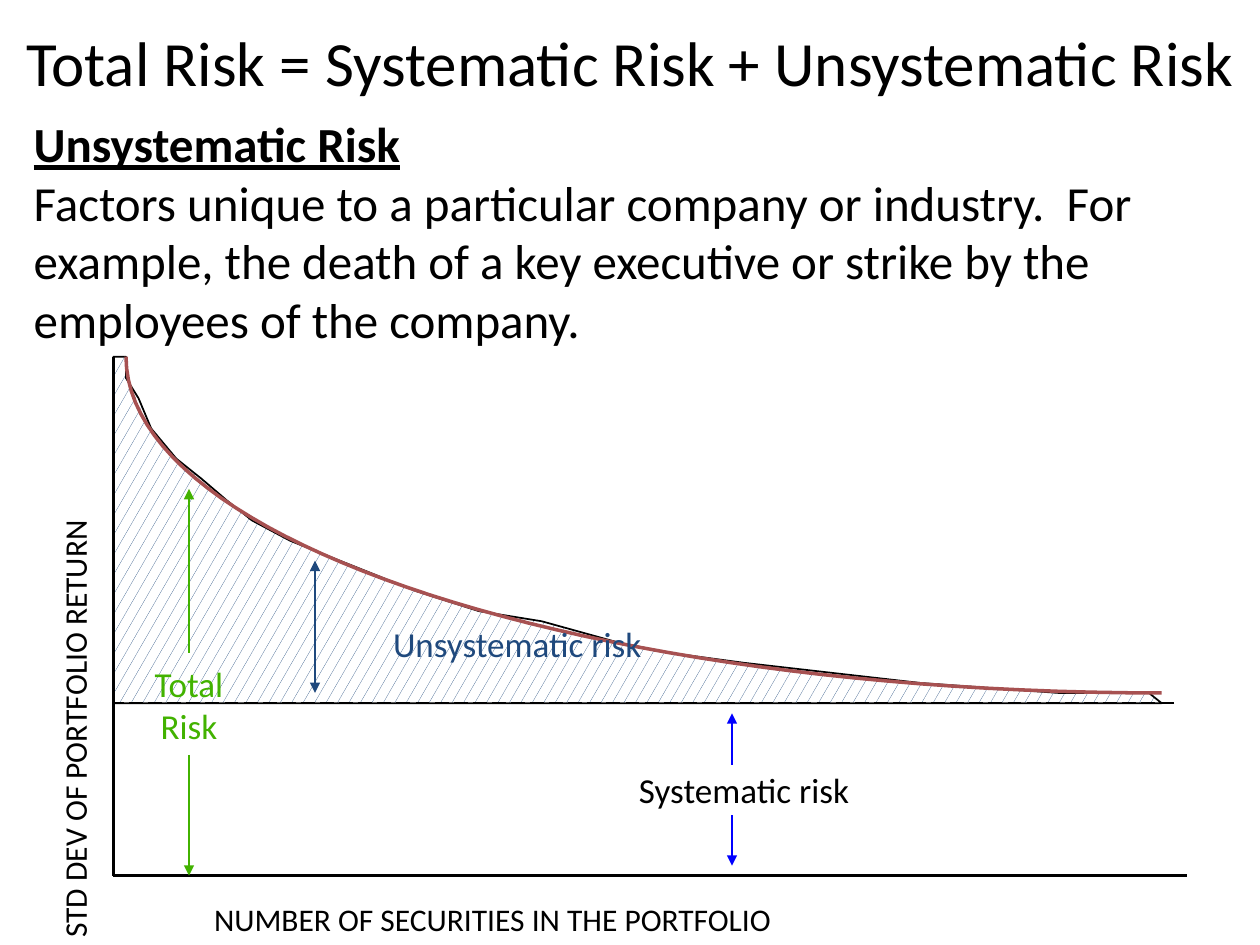
import pptx
import pptx.dml.color
import pptx.enum.dml
import pptx.enum.shapes
import pptx.enum.text
import pptx.oxml
import pptx.oxml.ns
import pptx.util

Pt = pptx.util.Pt
CENTER = pptx.enum.text.PP_ALIGN.CENTER
LEFT = pptx.enum.text.PP_ALIGN.LEFT
BLACK, WHITE, GREEN, NAVY, BLUE, RED = "000000", "FFFFFF", "42B200", "1F497D", "0000FF", "A75151"
RISK_OUTLINE = [
    (7.2, 0), (0, 0), (0, 198), (599, 198), (591.8, 192.2), (540.7, 192.2),
    (461.5, 186.5), (360.7, 175), (317.5, 169.2), (288.7, 163.4), (244.8, 151.2),
    (208.8, 145.4), (172.8, 133.9), (144, 122.4), (115.2, 110.9), (100.8, 105.1),
    (79.2, 93.6), (64.8, 82.1), (50.4, 69.8), (36, 58.3), (21.6, 41),
    (14.4, 23.8), (7.2, 12.2), (7.2, 0),
]
RISK_CURVE = [(7.2, 0), (7.2, 106.6), (272.2, 192.2), (599, 192.2)]


def rgb(value):
    """Turn a hex string into a colour."""
    return pptx.dml.color.RGBColor.from_string(value)


def bezier(controls, steps=48):
    """Sample a cubic curve at equal parameter steps."""
    points = []
    for step in range(steps + 1):
        t = step / steps
        weights = ((1 - t) ** 3, 3 * t * (1 - t) ** 2, 3 * t ** 2 * (1 - t), t ** 3)
        points.append(tuple(sum(w * c[axis] for w, c in zip(weights, controls)) for axis in (0, 1)))
    return points


def add_outline(slide, origin, points, color, width, close):
    """Draw a path through points measured from the origin."""
    placed = [(Pt(origin[0] + x), Pt(origin[1] + y)) for x, y in points]
    builder = slide.shapes.build_freeform(*placed[0], scale=1.0)
    builder.add_line_segments(placed[1:], close=close)
    outline = builder.convert_to_shape()
    outline.shadow.inherit = False
    outline.fill.background()
    outline.line.color.rgb = rgb(color)
    outline.line.width = Pt(width)
    return outline


def add_line(slide, origin, start, end, color, width=1, heads=(), dash=None):
    """Draw a straight line, with arrowheads at the named ends."""
    x, y = origin
    line = slide.shapes.add_connector(
        pptx.enum.shapes.MSO_CONNECTOR.STRAIGHT,
        Pt(x + start[0]), Pt(y + start[1]), Pt(x + end[0]), Pt(y + end[1]))
    line.line.color.rgb = rgb(color)
    line.line.width = Pt(width)
    if dash:
        line.line.dash_style = dash
    namespace = pptx.oxml.ns.nsdecls("a")
    properties = line._element.spPr
    for head in heads:
        properties.find(pptx.oxml.ns.qn("a:ln")).append(
            pptx.oxml.parse_xml(f'<a:{head} {namespace} type="triangle"/>'))
    properties.append(pptx.oxml.parse_xml(f"<a:effectLst {namespace}/>"))


def add_text(slide, origin, box, lines, size, color, align=LEFT, wrap=False, rotation=0):
    """Place a text box with one paragraph for each line."""
    left, top, width, height = box
    label = slide.shapes.add_textbox(Pt(origin[0] + left), Pt(origin[1] + top), Pt(width), Pt(height))
    label.rotation = rotation
    frame = label.text_frame
    frame.word_wrap = wrap
    frame.text = "\n".join(lines)
    for paragraph in frame.paragraphs:
        paragraph.alignment = align
        paragraph.font.name = "Calibri"
        paragraph.font.size = Pt(size)
        paragraph.font.color.rgb = rgb(color)
    return frame


def add_title(slide, box, wording):
    """Fill and place the title placeholder."""
    title = slide.shapes.title
    title.left, title.top, title.width, title.height = map(Pt, box)
    title.text_frame.text = wording
    title.text_frame.vertical_anchor = pptx.enum.text.MSO_ANCHOR.MIDDLE
    heading = title.text_frame.paragraphs[0]
    heading.alignment = CENTER
    heading.font.name = "Calibri"
    heading.font.size = Pt(36)
    heading.font.color.rgb = rgb(BLACK)


def add_definition(slide, box):
    """Write the underlined term and its explanation."""
    definition = add_text(slide, (0, 0), box, [
        "Unsystematic Risk",
        "Factors unique to a particular company or industry.  For example, the death of "
        "a key executive or strike by the employees of the company.",
    ], 28, BLACK, wrap=True)
    term = definition.paragraphs[0]
    term.font.bold = True
    term.font.underline = True


def add_risk_diagram(slide, origin):
    """Draw the diversification diagram from its top left corner."""
    risk_area = add_outline(slide, origin, RISK_OUTLINE, BLACK, 1, True)
    risk_area.fill.patterned()
    risk_area.fill.pattern = pptx.enum.dml.MSO_PATTERN.SMALL_CONFETTI
    risk_area.fill.fore_color.rgb = rgb(NAVY)
    risk_area.fill.back_color.rgb = rgb(WHITE)

    corner = (0, 296.6)
    add_line(slide, origin, corner, (613.4, 296.6), BLACK, 2)
    add_line(slide, origin, corner, (0, 0), BLACK, 2)
    add_outline(slide, origin, bezier(RISK_CURVE), RED, 2, False)
    add_line(slide, origin, (606.2, 198), (0, 198), BLACK,
             dash=pptx.enum.dml.MSO_LINE.LONG_DASH)

    for x, start, end, color, heads in [
        (43.2, 169.2, 75.6, GREEN, ["tailEnd"]),
        (43.2, 227.5, 296.6, GREEN, ["tailEnd"]),
        (115.2, 192.2, 116.6, NAVY, ["headEnd", "tailEnd"]),
        (353.5, 233.3, 203.8, BLUE, ["tailEnd"]),
        (353.5, 262.1, 290.9, BLUE, ["tailEnd"]),
    ]:
        add_line(slide, origin, (x, start), (x, end), color, heads=heads)

    for box, lines, color in [
        ((5.8, 171.4, 74.9, 53.3), ["Total", "Risk"], GREEN),
        ((119.5, 148.3, 222.5, 30.2), ["Unsystematic risk"], NAVY),
        ((270, 231.8, 180.7, 30.2), ["Systematic risk"], BLACK),
    ]:
        add_text(slide, origin, box, lines, 20, color, CENTER)

    add_text(slide, origin, (-171, 170.2, 303.1, 34.6), ["STD DEV OF PORTFOLIO RETURN"],
             18, BLACK, wrap=True, rotation=270)
    add_text(slide, origin, (50.4, 306.7, 493.2, 28), ["NUMBER OF SECURITIES IN THE PORTFOLIO"],
             18, BLACK)


def main():
    """Build the slide and save it."""
    deck = pptx.Presentation()
    deck.slide_width, deck.slide_height = Pt(720), Pt(540)
    slide = deck.slides.add_slide(deck.slide_layouts[5])
    add_risk_diagram(slide, (64.8, 203.8))
    add_definition(slide, (12.2, 61.2, 689.8, 142.6))
    add_title(slide, (0, 4.3, 720, 61.2), "Total Risk = Systematic Risk + Unsystematic Risk")
    deck.save("out.pptx")


if __name__ == "__main__":
    main()
